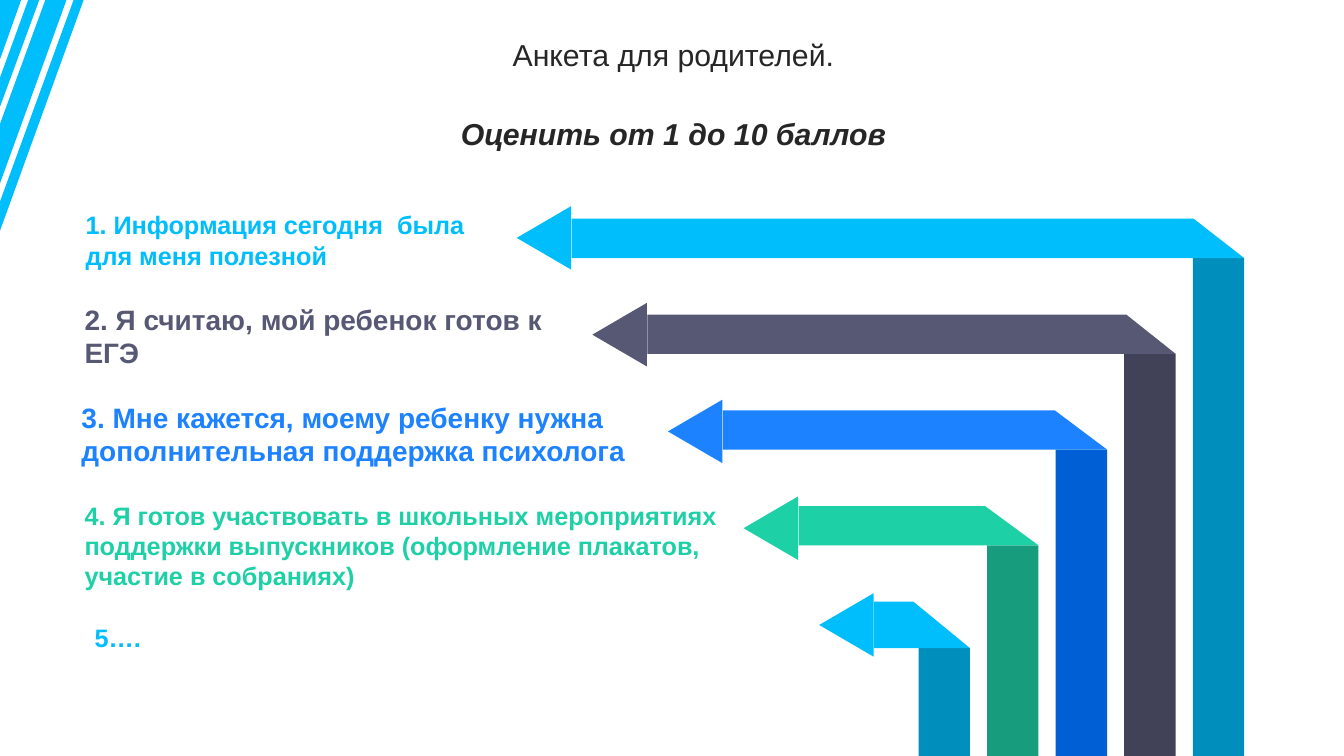
from pptx import Presentation
from pptx.dml.color import RGBColor
from pptx.enum.shapes import MSO_SHAPE as Shape
from pptx.enum.text import MSO_ANCHOR as Anchor, PP_ALIGN as Align
from pptx.util import Inches, Pt

CYAN, TEAL = RGBColor(0x00, 0xBD, 0xFB), RGBColor(0x00, 0x8E, 0xBC)
SLATE, DUSK = RGBColor(0x56, 0x58, 0x74), RGBColor(0x41, 0x42, 0x57)
BLUE, NAVY = RGBColor(0x1C, 0x82, 0xFF), RGBColor(0x00, 0x5F, 0xD4)
MINT, GREEN = RGBColor(0x1E, 0xD0, 0xA6), RGBColor(0x17, 0x9C, 0x7D)
INK = RGBColor(0x26, 0x26, 0x26)

# light colour, dark colour, x of the fold, height of the band
ARROWS = [
    (CYAN, TEAL, 11.84, 0.39),
    (SLATE, DUSK, 11.17, 0.39),
    (BLUE, NAVY, 10.46, 0.39),
    (MINT, GREEN, 9.77, 0.39),
    (CYAN, TEAL, 9.06, 0.46),
]
# left, top, width, height, size, colour, wording
ITEMS = [
    (0.75, 2.03, 4.15, 0.71, 18, CYAN,
     "1. Информация сегодня  была для меня полезной"),
    (0.74, 2.95, 4.83, 0.77, 20, SLATE,
     "2. Я считаю, мой ребенок готов к ЕГЭ"),
    (0.71, 3.92, 5.86, 0.77, 20, BLUE,
     "3. Мне кажется, моему ребенку нужна дополнительная поддержка психолога"),
    (0.74, 4.91, 6.63, 1.01, 18, MINT,
     "4. Я готов участвовать в школьных мероприятиях поддержки выпускников "
     "(оформление плакатов, участие в собраниях)"),
    (0.84, 6.12, 6.96, 0.4, 18, CYAN, "5…."),
]
STRIPES = [
    [(0.73, 0), (0.83, 0), (0, 2.29), (0, 2)],
    [(0.39, 0), (0, 1.06), (0, 0.77), (0.28, 0)],
    [(0.66, 0), (0, 1.82), (0, 1.23), (0.45, 0)],
    [(0, 0), (0.21, 0), (0, 0.59)],
]


def paint(shape, color):
    shape.shadow.inherit = False
    shape.fill.solid()
    shape.fill.fore_color.rgb = color
    shape.line.fill.background()


def add_form(slide, outlines, color):
    """Draw closed outlines, given in inches, as one shape."""
    pens = [[(Inches(x), Inches(y)) for x, y in line] for line in outlines]
    form = slide.shapes.build_freeform(*pens[0][0])
    for i, (start, *rest) in enumerate(pens):
        if i:
            form.move_to(*start)
        form.add_line_segments(rest, close=True)
    paint(form.convert_to_shape(), color)


def add_block(slide, kind, box, color, turn=0):
    shape = slide.shapes.add_shape(kind, *map(Inches, box))
    shape.rotation = turn
    paint(shape, color)


def add_frame(slide, *box):
    frame = slide.shapes.add_textbox(*map(Inches, box)).text_frame
    frame.word_wrap = True
    return frame


def add_run(para, text, size, color, bold=False, italic=False):
    run = para.add_run()
    run.text = text
    font = run.font
    font.name, font.size = "Arial", Pt(size)
    font.bold, font.italic = bold, italic
    font.color.rgb = color


def add_title(slide):
    frame = add_frame(slide, 0.35, 0.37, 12.66, 1.21)
    frame.vertical_anchor = Anchor.MIDDLE
    first, second = frame.paragraphs[0], frame.add_paragraph()
    for para, gap in ((first, 10), (second, 38)):
        para.alignment = Align.CENTER
        para.line_spacing = 0.7
        para.space_before = Pt(gap)
    add_run(first, "Анкета для родителей.", 21.6, INK)
    add_run(second, "Оценить от 1 до 10 баллов", 21.6, INK, True, True)


def add_arrow(slide, i, light, dark, fold, height):
    """Draw a column that folds into a band with a head on its left."""
    col, wide = 11.83 - 0.68 * i, 0.51
    left, top = 5.67 + 0.75 * i, 2.17 + 0.95 * i
    right, base = col + wide, top + height
    add_block(slide, Shape.RECTANGLE, (col, base, wide, 7.5 - base), dark)
    band = [(left, top), (fold, top), (right, base), (left, base)]
    add_form(slide, [band], light)
    head = (5.08 + 0.75 * i, 2.09 + 0.96 * i, 0.63, 0.54)
    add_block(slide, Shape.ISOSCELES_TRIANGLE, head, light, 270)


def main():
    deck = Presentation()
    deck.slide_width, deck.slide_height = Inches(13.33), Inches(7.5)
    slide = deck.slides.add_slide(deck.slide_layouts[6])
    add_form(slide, STRIPES, CYAN)
    add_title(slide)
    for i, arrow in enumerate(ARROWS):
        add_arrow(slide, i, *arrow)
    for *box, size, color, text in ITEMS:
        frame = add_frame(slide, *box)
        add_run(frame.paragraphs[0], text, size, color, True)
    deck.save("out.pptx")


if __name__ == "__main__":
    main()
